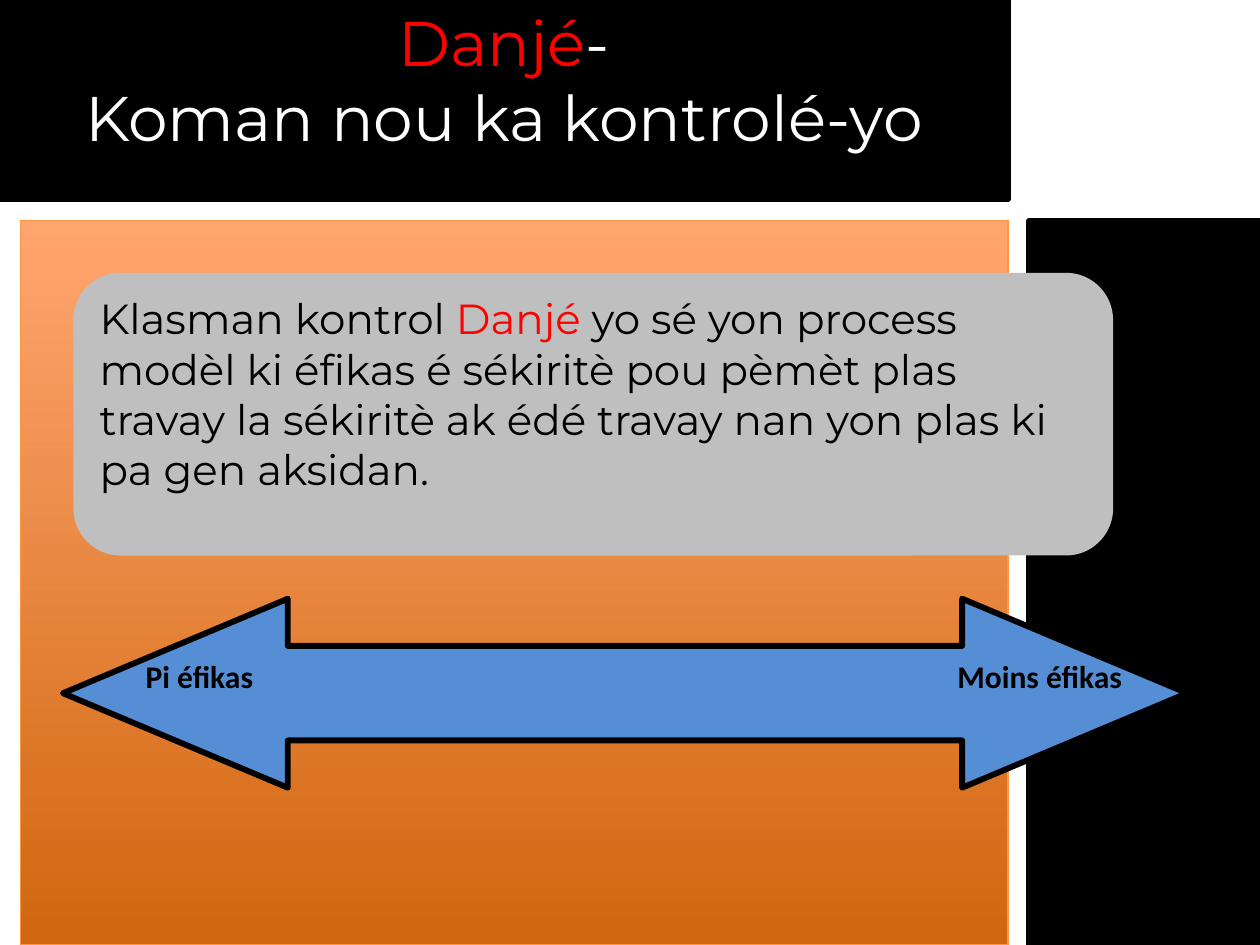
from dataclasses import dataclass

from pptx import Presentation
from pptx.dml.color import RGBColor
from pptx.enum import shapes, text
from pptx.util import Cm, Pt


@dataclass(frozen=True)
class Theme:
    black: str = "000000"
    white: str = "FFFFFF"
    danger: str = "FF0000"
    card: str = "BFBFBF"
    arrow: str = "558ED5"
    orange_dark: str = "D0670F"
    orange_light: str = "FFA670"
    orange_edge: str = "FF953E"
    heading_font: str = "Montserrat"
    label_font: str = "Calibri"
    title_size: int = 36
    body_size: int = 24
    label_size: int = 18
    heavy_line: float = 3.34
    thin_line: float = 0.75


THEME = Theme()
SHAPE = shapes.MSO_SHAPE


def rgb(value):
    return RGBColor.from_string(value)


def add_block(slide, kind, box, fill=None, line=None, line_width=THEME.heavy_line):
    """Add a preset shape; a missing fill or line colour leaves that part bare."""
    block = slide.shapes.add_shape(kind, *map(Cm, box))
    block.shadow.inherit = False
    if fill:
        block.fill.solid()
        block.fill.fore_color.rgb = rgb(fill)
    if line:
        block.line.color.rgb = rgb(line)
        block.line.width = Pt(line_width)
    else:
        block.line.fill.background()
    return block


def add_run(paragraph, words, size, color, font=THEME.heading_font, bold=False):
    run = paragraph.add_run()
    run.text = words
    run.font.name = font
    run.font.size = Pt(size)
    run.font.bold = bold
    run.font.color.rgb = rgb(color)


def add_panels(slide):
    content = add_block(slide, SHAPE.RECTANGLE, (0.42, 4.45, 19.9, 14.6),
                        line=THEME.orange_edge, line_width=THEME.thin_line)
    content.fill.gradient()
    content.fill.gradient_angle = 90
    for stop, color in zip(content.fill.gradient_stops,
                           (THEME.orange_dark, THEME.orange_light)):
        stop.color.rgb = rgb(color)
    for box in ((0, 0, 20.32, 4.02), (20.75, 4.45, 4.65, 14.6)):
        add_block(slide, SHAPE.RECTANGLE, box, THEME.black, THEME.black)


def set_title(slide):
    title = slide.shapes.title
    title.left, title.top, title.width, title.height = map(Cm, (0, -0.64, 20.32, 4.45))
    title.element.getparent().append(title.element)  # in front of the panels
    frame = title.text_frame
    frame.word_wrap = True
    frame.vertical_anchor = text.MSO_ANCHOR.MIDDLE
    paragraph = frame.paragraphs[0]
    paragraph.alignment = text.PP_ALIGN.CENTER
    add_run(paragraph, "Danjé", THEME.title_size, THEME.danger)
    add_run(paragraph, "-", THEME.title_size, THEME.white)
    paragraph.add_line_break()
    add_run(paragraph, "Koman nou ka kontrolé-yo", THEME.title_size, THEME.white)


def add_card(slide):
    card = add_block(slide, SHAPE.ROUNDED_RECTANGLE, (1.48, 5.5, 20.96, 5.7), THEME.card)
    frame = card.text_frame
    frame.word_wrap = True
    frame.vertical_anchor = text.MSO_ANCHOR.TOP
    paragraph = frame.paragraphs[0]
    paragraph.alignment = text.PP_ALIGN.LEFT
    for words, color in (
        ("Klasman kontrol ", THEME.black),
        ("Danjé ", THEME.danger),
        ("yo sé yon process modèl ki éfikas é sékiritè pou pèmèt plas travay la "
         "sékiritè ak édé travay nan yon plas ki pa gen aksidan.", THEME.black),
    ):
        add_run(paragraph, words, THEME.body_size, color)


def add_scale(slide):
    """Draw the double arrow with a label at each end."""
    arrow = add_block(slide, SHAPE.LEFT_RIGHT_ARROW, (1.27, 12.07, 22.66, 3.81),
                      THEME.arrow, THEME.black)
    arrow.adjustments[0] = 0.5
    arrow.adjustments[1] = 1.19
    for left, words in ((1.9, "Pi éfikas"), (18.84, "Moins éfikas")):
        label = slide.shapes.add_textbox(*map(Cm, (left, 13.13, 4.24, 1.8)))
        label.text_frame.word_wrap = True
        paragraph = label.text_frame.paragraphs[0]
        paragraph.alignment = text.PP_ALIGN.CENTER
        add_run(paragraph, words, THEME.label_size, THEME.black, THEME.label_font, bold=True)


def main():
    deck = Presentation()
    deck.slide_width, deck.slide_height = Cm(25.4), Cm(19.05)
    slide = deck.slides.add_slide(deck.slide_layouts.get_by_name("Title Only"))
    add_panels(slide)
    set_title(slide)
    add_card(slide)
    add_scale(slide)
    deck.save("out.pptx")


if __name__ == "__main__":
    main()
